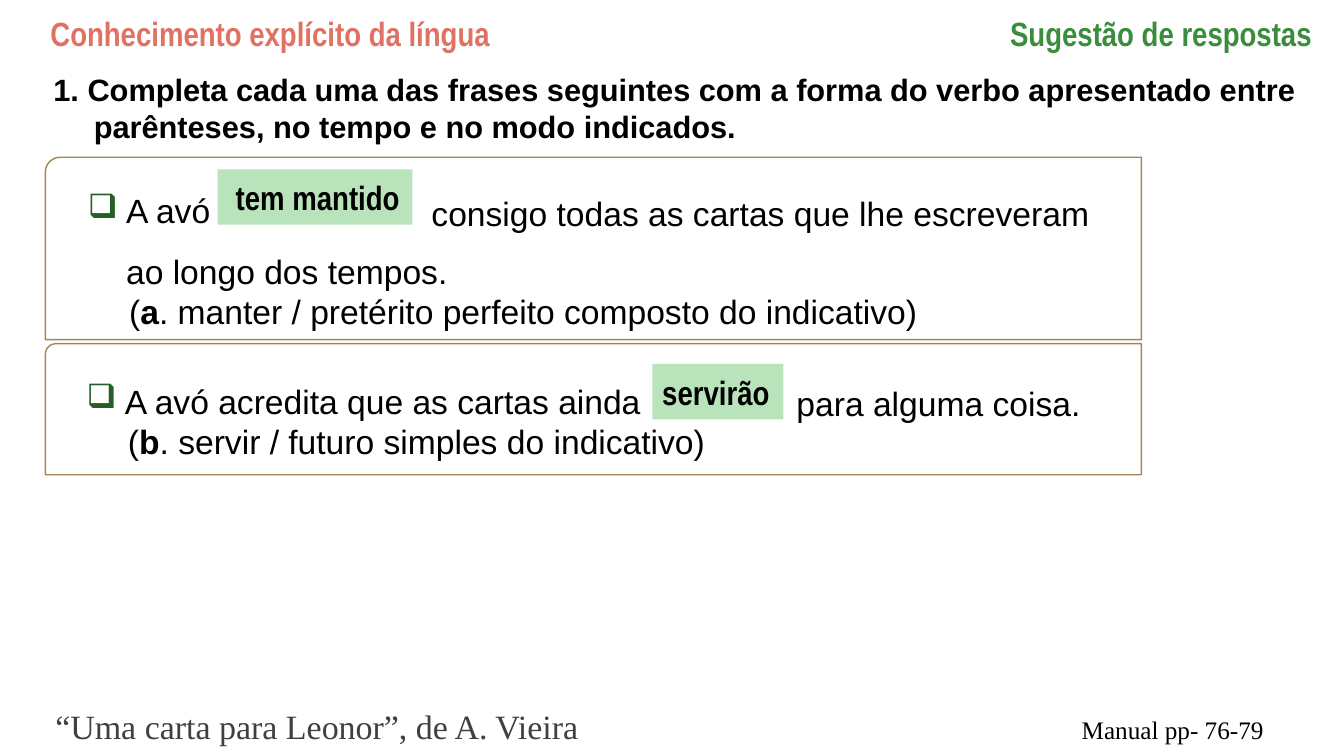
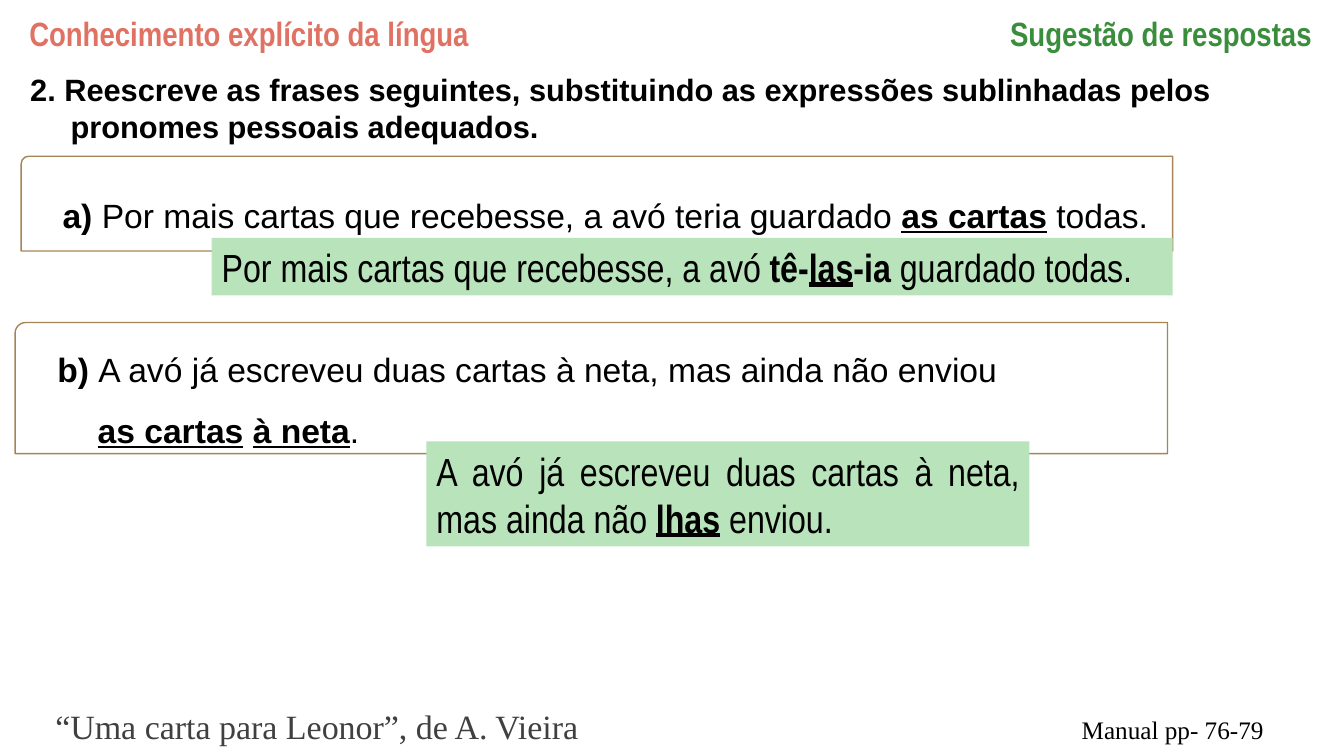
from lxml.etree import SubElement
from pptx import Presentation
from pptx.dml.color import RGBColor
from pptx.enum.shapes import MSO_SHAPE
from pptx.enum.text import MSO_ANCHOR, MSO_AUTO_SIZE, PP_ALIGN
from pptx.oxml.ns import qn
from pptx.util import Inches, Pt

COLOURS = {
    "heading": "E07263", "suggestion": "398D3B", "text": "000000",
    "work": "404040", "answer": "B9E3BA", "frame": "FFFFFF",
    "border": "A68555", "bullet": "265E27",
}

STYLES = {
    "heading": {"size": 24, "name": "Arial Narrow", "bold": True, "colour": "heading"},
    "suggestion": {"size": 24, "name": "Arial Narrow", "bold": True, "colour": "suggestion"},
    "question": {"size": 22, "name": "Arial", "bold": True, "colour": "text"},
    "sentence": {"size": 24, "name": "Arial", "bold": False, "colour": "text"},
    "short answer": {"size": 24, "name": "Arial Narrow", "bold": True, "colour": "text"},
    "long answer": {"size": 28, "name": "Arial Narrow", "bold": False, "colour": "text"},
    "work": {"size": 24.3, "name": "Times New Roman", "bold": False, "colour": "work"},
    "gap": {"size": 28.8, "name": "Times New Roman", "bold": False, "colour": "work"},
    "pages": {"size": 18, "name": "Times New Roman", "bold": False, "colour": "text"},
}

BOLD = {"bold": True}
UNDERLINED = {"bold": True, "underline": True}

HEADING = "Conhecimento explícito da língua"
SUGGESTION = "Sugestão de respostas"
WORK = "“Uma carta para Leonor”, de A. Vieira"
PAGES = "Manual pp- 76-79"

BULLETED = {"indent": (0.66, -0.38), "spacing": 1.5, "bullet": "❑"}
CLUE = {"indent": (0.29, 0.4)}
ITEM = {"indent": (0.29, 0), "spacing": 1.5}
ITEM_REST = {"indent": (0.29, 0.4), "spacing": 1.5}
HANGING = {"indent": (0.4, -0.4), "plain": True}
JUSTIFIED = {"align": PP_ALIGN.JUSTIFY}

SLIDES = [
    {
        "left": 0.4,
        "question_left": 0.43,
        "question": "1. Completa cada uma das frases seguintes com a forma do verbo "
                    "apresentado entre parênteses, no tempo e no modo indicados.",
        "sentences": [
            {
                "box": (0.45, 1.56, 10.87, 1.81),
                "lines": [
                    (BULLETED, [("A avó", {}), ("\n", {}), ("ao longo dos tempos.", {})]),
                    (CLUE, [("(", {}), ("a", BOLD),
                            (". manter / pretérito perfeito composto do indicativo)", {})]),
                ],
                "rest": ("consigo todas as cartas que lhe escreveram", (4.28, 1.91, 6.9, 0.4)),
                "answer_box": (2.16, 1.68, 1.93, 0.55),
                "answer_style": "short answer",
                "answer": ({"align": PP_ALIGN.JUSTIFY, "indent": (0.08, 0)},
                           [("tem mantido", {})]),
            },
            {
                "box": (0.45, 3.41, 10.87, 1.3),
                "lines": [
                    (BULLETED, [("A avó acredita que as cartas ainda", {})]),
                    (CLUE, [("(", {}), ("b", BOLD),
                            (". servir / futuro simples do indicativo)", {})]),
                ],
                "rest": ("para alguma coisa.", (7.9, 3.8, 3.2, 0.4)),
                "answer_box": (6.47, 3.61, 1.3, 0.55),
                "answer_style": "short answer",
                "answer": (JUSTIFIED, [("servirão", {})]),
            },
        ],
    },
    {
        "left": 0.19,
        "question_left": 0.2,
        "question": "2. Reescreve as frases seguintes, substituindo as expressões "
                    "sublinhadas pelos pronomes pessoais adequados.",
        "sentences": [
            {
                "box": (0.21, 1.55, 11.42, 0.94),
                "lines": [
                    (ITEM, [("a) ", BOLD),
                            ("Por mais cartas que recebesse, a avó teria guardado ", {}),
                            ("as cartas", UNDERLINED), (" todas.", {})]),
                ],
                "answer_box": (2.1, 2.36, 9.53, 0.57),
                "answer_style": "long answer",
                "answer": (JUSTIFIED, [("Por mais cartas que recebesse, a avó ", {}),
                                       ("tê-", BOLD), ("las", UNDERLINED),
                                       ("-ia ", BOLD), ("guardado todas.", {})]),
            },
            {
                "box": (0.15, 3.2, 11.43, 1.3),
                "lines": [
                    (ITEM, [("b) ", BOLD),
                            ("A avó já escreveu duas cartas à neta, mas ainda não enviou", {})]),
                    (ITEM_REST, [("as cartas", UNDERLINED), (" ", BOLD),
                                 ("à neta", UNDERLINED), (".", {})]),
                ],
                "answer_box": (4.23, 4.38, 5.98, 1.04),
                "answer_style": "long answer",
                "answer": (JUSTIFIED,
                           [("A avó já escreveu duas cartas à neta, mas ainda não ", {}),
                            ("lhas", UNDERLINED), (" enviou.", {})]),
            },
        ],
    },
]


def colour(key):
    return RGBColor.from_string(COLOURS[key])


def place(part, box):
    part.left, part.top, part.width, part.height = map(Inches, box)


def format_run(run, style, changes):
    values = {**STYLES[style], **changes}
    run.font.color.rgb = colour(values.pop("colour"))
    values["size"] = Pt(values["size"])
    for attribute, value in values.items():
        setattr(run.font, attribute, value)


def format_paragraph(paragraph, layout):
    properties = paragraph._p.get_or_add_pPr()
    if "indent" in layout:
        for attribute, length in zip(("marL", "indent"), layout["indent"]):
            properties.set(attribute, str(Inches(length)))
    if "bullet" in layout:
        bullet_colour = SubElement(properties, qn("a:buClr"))
        SubElement(bullet_colour, qn("a:srgbClr"), val=COLOURS["bullet"])
        SubElement(properties, qn("a:buChar"), char=layout["bullet"])
    if "plain" in layout:
        SubElement(properties, qn("a:buNone"))
    if "tab" in layout:
        tabs = SubElement(properties, qn("a:tabLst"))
        SubElement(tabs, qn("a:tab"), pos=str(Inches(layout["tab"])), algn="l")
    paragraph.alignment = layout.get("align", PP_ALIGN.LEFT)
    paragraph.line_spacing = layout.get("spacing", 1.0)
    paragraph.space_before = Pt(0)


def write(part, lines, style, anchor=MSO_ANCHOR.TOP, inset=None):
    frame = part.text_frame
    settings = {"word_wrap": True, "auto_size": MSO_AUTO_SIZE.NONE, "vertical_anchor": anchor}
    if inset is not None:
        sides = ("left", "top", "right", "bottom")
        settings.update({f"margin_{side}": Inches(inset) for side in sides})
    for attribute, value in settings.items():
        setattr(frame, attribute, value)
    for number, (layout, pieces) in enumerate(lines):
        paragraph = frame.add_paragraph() if number else frame.paragraphs[0]
        format_paragraph(paragraph, layout)
        for text, changes in pieces:
            if text == "\n":
                paragraph.add_line_break()
                continue
            changes = dict(changes)
            run = paragraph.add_run()
            run.text = text
            format_run(run, changes.pop("style", style), changes)


def add_text(slide, box, lines, style, **options):
    write(slide.shapes.add_textbox(*map(Inches, box)), lines, style, **options)


def add_panel(slide, kind, box, fill):
    panel = slide.shapes.add_shape(kind, *map(Inches, box))
    panel.shadow.inherit = False
    panel.fill.solid()
    panel.fill.fore_color.rgb = colour(fill)
    return panel


def add_sentence(slide, sentence):
    frame = add_panel(slide, MSO_SHAPE.SNIP_ROUND_RECTANGLE, sentence["box"], "frame")
    frame.adjustments[0], frame.adjustments[1] = 0.081, 0
    fill_colour = frame._element.spPr.find(qn("a:solidFill"))[0]
    SubElement(fill_colour, qn("a:alpha"), val="50000")
    frame.line.color.rgb = colour("border")
    frame.line.width = Pt(1)
    write(frame, sentence["lines"], "sentence", MSO_ANCHOR.MIDDLE)
    if "rest" in sentence:
        text, box = sentence["rest"]
        add_text(slide, box, [({}, [(text, {})])], "sentence", inset=0)
    answer = add_panel(slide, MSO_SHAPE.RECTANGLE, sentence["answer_box"], "answer")
    answer.line.fill.background()
    write(answer, [sentence["answer"]], sentence["answer_style"], MSO_ANCHOR.MIDDLE)


def add_shared(slide, left):
    heading = slide.shapes.title
    place(heading, (left, 0.08, 4.8, 0.5))
    write(heading, [({}, [(HEADING, {})])], "heading")
    add_text(slide, (9.92, 0.08, 3.41, 0.5), [({}, [(SUGGESTION, {})])], "suggestion")
    footer = ({"spacing": 0.8, "tab": 10.18},
              [(WORK, {}), ("\t", {"style": "gap"}), (PAGES, {"style": "pages"})])
    add_text(slide, (0.45, 6.94, 12.6, 0.52), [footer], "work", anchor=MSO_ANCHOR.BOTTOM)


def main():
    presentation = Presentation()
    presentation.slide_width, presentation.slide_height = Inches(13.33), Inches(7.5)
    for content in SLIDES:
        slide = presentation.slides.add_slide(presentation.slide_layouts[1])
        add_shared(slide, content["left"])
        question = slide.placeholders[1]
        place(question, (content["question_left"], 0.65, 12.78, 0.84))
        write(question, [(HANGING, [(content["question"], {})])], "question")
        for sentence in content["sentences"]:
            add_sentence(slide, sentence)
    presentation.save("out.pptx")


if __name__ == "__main__":
    main()
